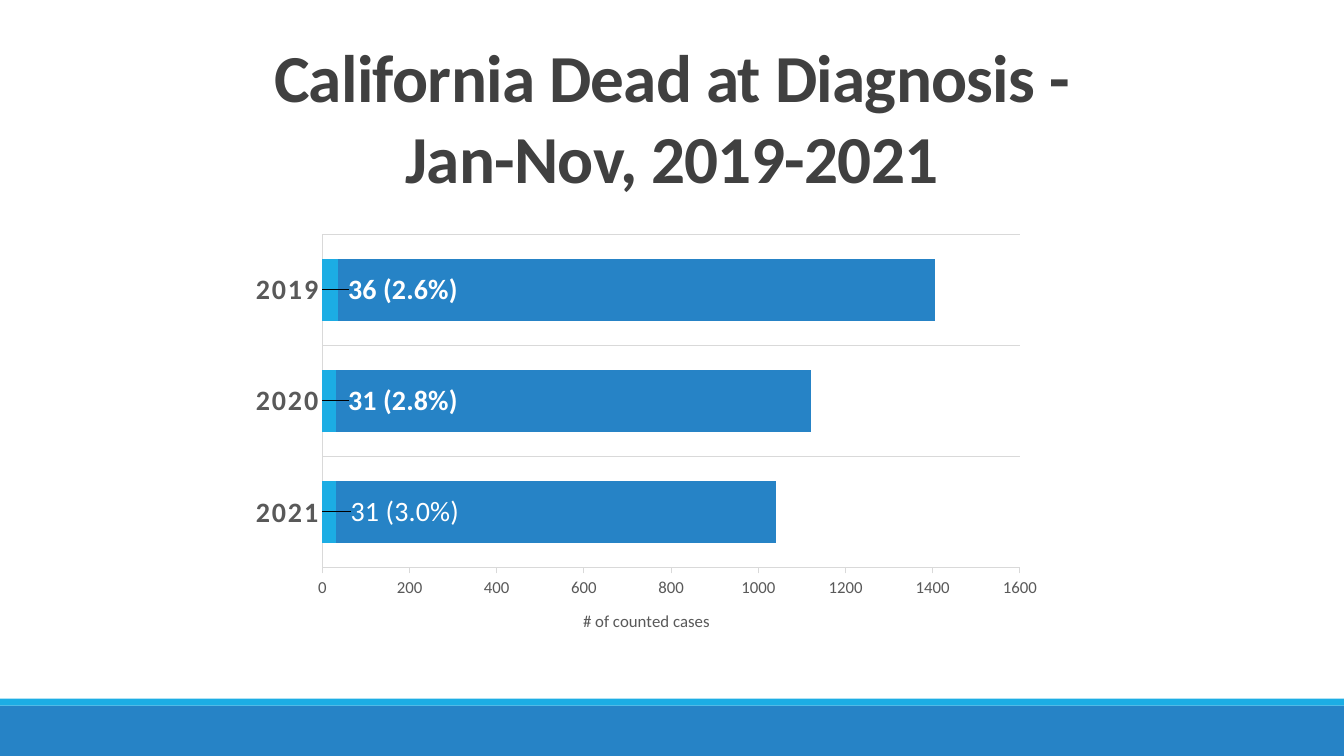
"""Build a slide with a stacked bar chart of California cases dead at diagnosis."""
import pptx
import pptx.chart.data
import pptx.dml.color
import pptx.enum.chart
import pptx.enum.shapes
import pptx.enum.text
import pptx.oxml
import pptx.oxml.ns
import pptx.util

Pt = pptx.util.Pt
RGB = pptx.dml.color.RGBColor
XL = pptx.enum.chart

BLUE = RGB(0x26, 0x83, 0xC6)
CYAN = RGB(0x1C, 0xAD, 0xE4)
WHITE = RGB(0xFF, 0xFF, 0xFF)
DARK = RGB(0x40, 0x40, 0x40)
GRAY = RGB(0x59, 0x59, 0x59)
RULE = RGB(0xD9, 0xD9, 0xD9)
FONT = "Calibri"

TITLE = ["California Dead at Diagnosis -", "Jan-Nov, 2019-2021"]
AXIS_TITLE = "# of counted cases"
YEARS = ["2021", "2020", "2019"]
SERIES = [("Series 1", [31, 31, 36], CYAN), ("Series 2", [1010, 1090, 1370], BLUE)]
LABELS = [("31 (3.0%)", False, 0.028), ("31 (2.8%)", True, 0.025), ("36 (2.6%)", True, 0.025)]
PLOT_AREA = {"x": 0.168, "y": 0.072, "w": 0.803, "h": 0.753}
WIDTH, HEIGHT = 960, 540
BANDS = [(504, 36, BLUE), (499, 5, CYAN)]


def style(font, size, color, bold=False):
    font.name, font.size, font.bold = FONT, Pt(size), bold
    font.color.rgb = color


def write(tf, lines, size, color, bold=False, spacing=None):
    for i, line in enumerate(lines):
        p = tf.paragraphs[0] if i == 0 else tf.add_paragraph()
        p.alignment = pptx.enum.text.PP_ALIGN.CENTER
        p.line_spacing = 1.0
        p.space_before = Pt(0)
        r = p.add_run()
        r.text = line
        style(r.font, size, color, bold)
        if spacing is not None:
            r.font._element.set("spc", str(spacing))


def rule(line):
    line.color.rgb = RULE
    line.width = Pt(0.75)


def manual_layout(parent, index, inner=False, **values):
    for old in parent.findall(pptx.oxml.ns.qn("c:layout")):
        parent.remove(old)
    tags = ""
    if inner:
        tags = '<c:layoutTarget val="inner"/><c:xMode val="edge"/><c:yMode val="edge"/>'
    tags += "".join(f'<c:{k} val="{v}"/>' for k, v in values.items())
    parent.insert(index, pptx.oxml.parse_xml(
        f'<c:layout {pptx.oxml.ns.nsdecls("c")}><c:manualLayout>{tags}</c:manualLayout></c:layout>'))


def add_bands(s):
    for top, height, color in BANDS:
        sp = s.shapes.add_shape(pptx.enum.shapes.MSO_SHAPE.RECTANGLE,
                                0, Pt(top), Pt(WIDTH), Pt(height))
        sp.shadow.inherit = False
        sp.fill.solid()
        sp.fill.fore_color.rgb = color
        sp.line.fill.background()


def add_title(s):
    sp = s.shapes.title
    sp.left, sp.top, sp.width, sp.height = Pt(0), Pt(21), Pt(WIDTH), Pt(124)
    tf = sp.text_frame
    tf.word_wrap = True
    tf.auto_size = pptx.enum.text.MSO_AUTO_SIZE.NONE
    tf.vertical_anchor = pptx.enum.text.MSO_ANCHOR.MIDDLE
    write(tf, TITLE, 48, DARK, bold=True, spacing=-50)


def add_cases_chart(s):
    data = pptx.chart.data.CategoryChartData()
    data.categories = YEARS
    for name, values, color in SERIES:
        data.add_series(name, values)
    chart = s.shapes.add_chart(XL.XL_CHART_TYPE.BAR_STACKED, Pt(126), Pt(144.7),
                               Pt(620.6), Pt(316), data).chart
    chart.has_legend = False
    chart.has_title = False
    style(chart.font, 10, GRAY)
    plot = chart.plots[0]
    plot.gap_width, plot.overlap = 79, 100
    plot.vary_by_categories = False
    for series, (name, values, color) in zip(plot.series, SERIES):
        series.format.fill.solid()
        series.format.fill.fore_color.rgb = color

    years = chart.category_axis
    years.major_tick_mark = XL.XL_TICK_MARK.NONE
    years.has_major_gridlines = True
    rule(years.major_gridlines.format.line)
    style(years.tick_labels.font, 20, GRAY, bold=True)
    chart.element.xpath(".//c:catAx/c:txPr//a:defRPr")[0].set("spc", "120")

    cases = chart.value_axis
    cases.minimum_scale, cases.maximum_scale, cases.major_unit = 0, 1600, 200
    cases.major_tick_mark = XL.XL_TICK_MARK.OUTSIDE
    cases.has_major_gridlines = False
    style(cases.tick_labels.font, 12, GRAY)
    write(cases.axis_title.text_frame, [AXIS_TITLE], 12, GRAY)
    for axis in (years, cases):
        axis.minor_tick_mark = XL.XL_TICK_MARK.NONE
        rule(axis.format.line)

    for i, (text, bold, shift) in enumerate(LABELS):
        label = plot.series[0].points[i].data_label
        write(label.text_frame, [text], 20, WHITE, bold)
        label.position = XL.XL_LABEL_POSITION.INSIDE_BASE
        manual_layout(chart.element.xpath(".//c:dLbl")[i], 1, x=shift, y=0)
    manual_layout(chart.element.xpath(".//c:plotArea")[0], 0, inner=True, **PLOT_AREA)


def main():
    prs = pptx.Presentation()
    prs.slide_width, prs.slide_height = Pt(WIDTH), Pt(HEIGHT)
    s = prs.slides.add_slide(prs.slide_layouts[5])
    add_bands(s)
    add_title(s)
    add_cases_chart(s)
    prs.save("out.pptx")


if __name__ == "__main__":
    main()
